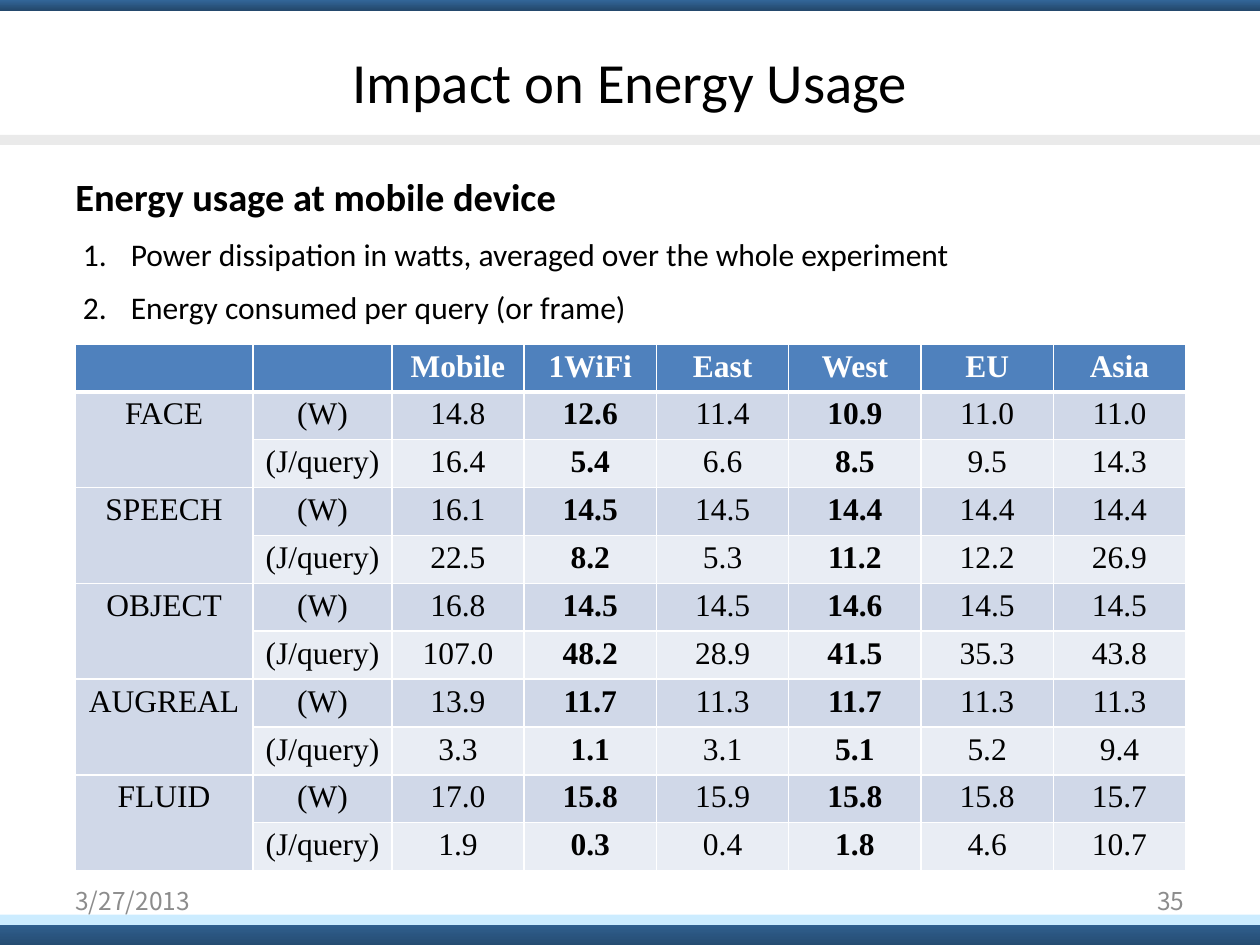
import dataclasses

import lxml.etree
import pptx
import pptx.dml.color
import pptx.enum.shapes
import pptx.enum.text
import pptx.oxml.ns
import pptx.util

Pt = pptx.util.Pt
qn = pptx.oxml.ns.qn
ALIGN = pptx.enum.text.PP_ALIGN
ANCHOR = pptx.enum.text.MSO_ANCHOR

# The slide is a grid of 100 columns by 75 rows
WIDE, HIGH = pptx.util.Inches(10), pptx.util.Inches(7.5)
COL, ROW = WIDE / 100, HIGH / 75

HUES = {
    "blue": "336699", "navy": "24496D", "ice": "CCECFF", "rule": "EAEAEA",
    "head": "4F81BD", "dark": "D0D8E8", "pale": "E9EDF4",
    "white": "FFFFFF", "black": "000000", "grey": "8C8C8C",
}


@dataclasses.dataclass
class Box:
    left: float
    top: float
    width: float
    height: float

    def place(self) -> tuple:
        return (round(self.left * COL), round(self.top * ROW),
                round(self.width * COL), round(self.height * ROW))


@dataclasses.dataclass
class Bar:
    top: float
    height: float
    hues: tuple


@dataclasses.dataclass
class App:
    name: str
    watts: str
    joules: str


BARS = [
    Bar(72.8, 2.5, ("blue", "navy")),
    Bar(72.6, 0.8, ("ice",)),
    Bar(10.7, 0.8, ("rule",)),
    Bar(0, 0.8, ("blue", "navy")),
]
POINTS = [
    "Power dissipation in watts, averaged over the whole experiment",
    "Energy consumed per query (or frame)",
]
HEADS = ["", "", "Mobile", "1WiFi", "East", "West", "EU", "Asia"]
STRONG = ("1WiFi", "West")
APPS = [
    App("FACE", "14.8 12.6 11.4 10.9 11.0 11.0", "16.4 5.4 6.6 8.5 9.5 14.3"),
    App("SPEECH", "16.1 14.5 14.5 14.4 14.4 14.4", "22.5 8.2 5.3 11.2 12.2 26.9"),
    App("OBJECT", "16.8 14.5 14.5 14.6 14.5 14.5", "107.0 48.2 28.9 41.5 35.3 43.8"),
    App("AUGREAL", "13.9 11.7 11.3 11.7 11.3 11.3", "3.3 1.1 3.1 5.1 5.2 9.4"),
    App("FLUID", "17.0 15.8 15.9 15.8 15.8 15.7", "1.9 0.3 0.4 1.8 4.6 10.7"),
]
SPANS = [14.15, 11] + [10.5] * 6
TALL = 3.77


def hue(name: str) -> pptx.dml.color.RGBColor:
    return pptx.dml.color.RGBColor.from_string(HUES[name])


def write(para, text: str, size: float = 18, font: str = "Calibri",
          color: str = "black", bold: bool = False, align=ALIGN.LEFT) -> None:
    para.alignment = align
    run = para.add_run()
    run.text = text
    run.font.size, run.font.name, run.font.bold = Pt(size), font, bold
    run.font.color.rgb = hue(color)


def frame(slide, box: Box, anchor=ANCHOR.MIDDLE):
    area = slide.shapes.add_textbox(*box.place()).text_frame
    area.word_wrap = True
    area.vertical_anchor = anchor
    return area


def draw_bar(slide, bar: Bar) -> None:
    kind = pptx.enum.shapes.MSO_SHAPE.RECTANGLE
    shape = slide.shapes.add_shape(kind, *Box(0, bar.top, 100, bar.height).place())
    shape.shadow.inherit = False
    shape.line.fill.background()
    if len(bar.hues) == 1:
        shape.fill.solid()
        shape.fill.fore_color.rgb = hue(bar.hues[0])
        return
    shape.fill.gradient()
    shape.fill.gradient_angle = 270
    for stop, name in zip(shape.fill.gradient_stops, bar.hues):
        stop.color.rgb = hue(name)


def edge(cell, row: int) -> None:
    """Add white cell borders, thick between the head and the first row."""
    thick = {(0, "B"), (1, "T")}
    props = cell._tc.get_or_add_tcPr()
    for place, side in enumerate("LRTB"):
        line = lxml.etree.Element(qn(f"a:ln{side}"))
        line.set("w", str(Pt(3 if (row, side) in thick else 1)))
        fill = lxml.etree.SubElement(line, qn("a:solidFill"))
        lxml.etree.SubElement(fill, qn("a:srgbClr")).set("val", HUES["white"])
        props.insert(place, line)


def draw_table(slide, rows: list[list[str]]) -> None:
    box = Box(5.95, 27.3, sum(SPANS), TALL * len(rows))
    grid = slide.shapes.add_table(len(rows), len(SPANS), *box.place()).table
    grid.horz_banding = False
    for column, span in zip(grid.columns, SPANS):
        column.width = round(span * COL)
    for r, texts in enumerate(rows):
        grid.rows[r].height = round(TALL * ROW)
        for c, text in enumerate(texts):
            cell = grid.cell(r, c)
            cell.margin_left = cell.margin_right = round(0.5 * COL)
            cell.margin_top = cell.margin_bottom = round(0.4 * ROW)
            cell.fill.solid()
            band = "head" if r == 0 else "dark" if r % 2 or c == 0 else "pale"
            cell.fill.fore_color.rgb = hue(band)
            edge(cell, r)
            para = cell.text_frame.paragraphs[0]
            if text:
                write(para, text, font="Times New Roman", align=ALIGN.CENTER,
                      color="black" if r else "white",
                      bold=r == 0 or HEADS[c] in STRONG)
            else:
                para.font.size = Pt(18)
    for r in range(1, len(rows), 2):
        grid.cell(r, 0).merge(grid.cell(r + 1, 0))


def draw_body(slide) -> None:
    area = frame(slide, Box(5, 12.3, 90, 17.3), ANCHOR.TOP)
    for place, text in enumerate(["Energy usage at mobile device"] + POINTS):
        para = area.add_paragraph() if place else area.paragraphs[0]
        size = 18 if place else 22
        para.line_spacing = 1.25
        para.space_before = Pt(size * 0.2)
        write(para, text, size=size, bold=place == 0)
        if place:
            props = para._p.get_or_add_pPr()
            props.set("marL", str(round(4.4 * COL)))
            props.set("indent", str(round(-3.8 * COL)))
            mark = lxml.etree.SubElement(props, qn("a:buAutoNum"))
            mark.set("type", "arabicPeriod")


def main() -> None:
    deck = pptx.Presentation()
    deck.slide_width, deck.slide_height = WIDE, HIGH
    slide = deck.slides.add_slide(deck.slide_layouts[6])

    # Bands across the slide
    for bar in BARS:
        draw_bar(slide, bar)

    # Title and body
    title = frame(slide, Box(5, 3, 90, 6.9))
    write(title.paragraphs[0], "Impact on Energy Usage", size=32.4, align=ALIGN.CENTER)
    draw_body(slide)

    # Energy table, two rows for each app
    rows = [HEADS]
    for app in APPS:
        rows.append([app.name, "(W)"] + app.watts.split())
        rows.append(["", "(J/query)"] + app.joules.split())
    draw_table(slide, rows)

    # Date and page number
    for left, text, align in ((5, "3/27/2013", ALIGN.LEFT), (71.7, "35", ALIGN.RIGHT)):
        foot = frame(slide, Box(left, 69.5, 23.3, 4))
        write(foot.paragraphs[0], text, size=14, font="Noto Sans CJK KR",
              color="grey", align=align)

    deck.save("out.pptx")


if __name__ == "__main__":
    main()
